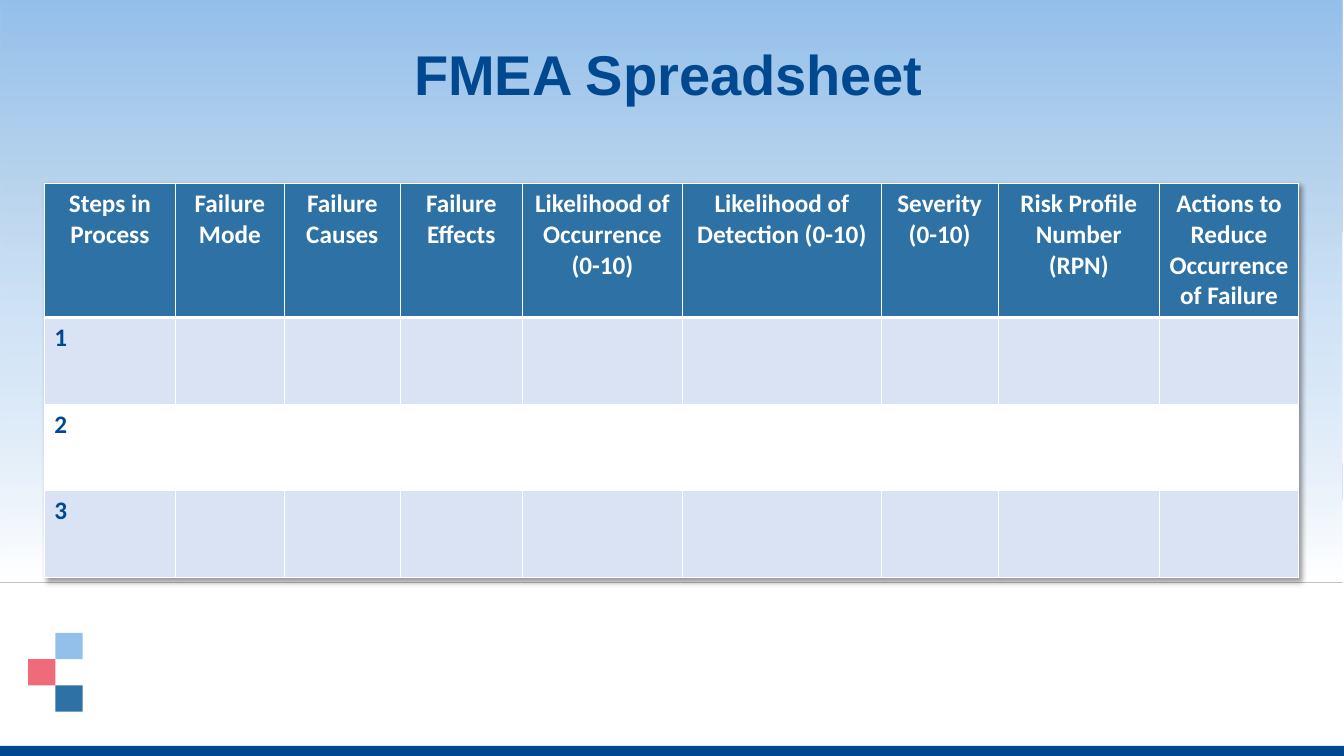
from lxml import etree
from pptx import Presentation
from pptx.dml.color import RGBColor
from pptx.enum import shapes, text
from pptx.oxml import ns
from pptx.util import Inches, Pt

NAVY = RGBColor(0x00, 0x49, 0x91)
BLUE = RGBColor(0x2E, 0x72, 0xA5)
SKY = RGBColor(0x93, 0xBF, 0xEB)
MIST = RGBColor(0xB5, 0xD2, 0xEC)
HAZE = RGBColor(0xBC, 0xD7, 0xF2)
ROSE = RGBColor(0xEF, 0x6B, 0x7A)
PALE = RGBColor(0xDA, 0xE3, 0xF3)
WHITE = RGBColor(0xFF, 0xFF, 0xFF)
BLACK = RGBColor(0x00, 0x00, 0x00)

WIDTH, HEIGHT = 13.33, 7.5
# Stops: position and opacity in percent
STOPS = [(0, SKY, 100), (29, MIST, 100), (54, HAZE, 69), (99, WHITE, 100)]
HEADS = ["Steps in Process", "Failure Mode", "Failure Causes",
         "Failure Effects", "Likelihood of Occurrence (0-10)",
         "Likelihood of Detection (0-10)", "Severity (0-10)",
         "Risk Profile Number (RPN)",
         "Actions to Reduce Occurrence of Failure"]
COLS = [1.3, 1.08, 1.15, 1.21, 1.59, 1.97, 1.16, 1.6, 1.38]
ROWS = [1.33, 0.86, 0.86, 0.86]


def add(parent, tag, **attrs):
    node = etree.SubElement(parent, ns.qn(tag))
    for name, value in attrs.items():
        node.set(name, str(value))
    return node


def add_rect(slide, box, color):
    rect = slide.shapes.add_shape(shapes.MSO_SHAPE.RECTANGLE,
                                  *map(Inches, box))
    rect.shadow.inherit = False
    rect.fill.solid()
    rect.fill.fore_color.rgb = color
    rect.line.fill.background()
    return rect


def add_sky(slide, box):
    rect = add_rect(slide, box, SKY)
    rect.fill.gradient()
    rect.fill.gradient_angle = 270
    stops = rect._element.spPr.find(".//" + ns.qn("a:gsLst"))
    for old in list(stops):
        stops.remove(old)
    for pos, color, alpha in STOPS:
        stop = add(stops, "a:gs", pos=pos * 1000)
        tint = add(stop, "a:srgbClr", val=color)
        if alpha < 100:
            add(tint, "a:alpha", val=alpha * 1000)


def add_mark(slide, box):
    left, top, width, height = box
    wide, high = width / 2, height / 3
    for col, row, color in [(1, 0, SKY), (1, 2, BLUE), (0, 1, ROSE)]:
        add_rect(slide, (left + col * wide, top + row * high, wide, high),
                 color)


def set_title(slide, box):
    title = slide.shapes.title
    title.left, title.top, title.width, title.height = map(Inches, box)
    frame = title.text_frame
    frame.text = "FMEA Spreadsheet"
    frame.word_wrap = True
    frame.auto_size = text.MSO_AUTO_SIZE.NONE
    frame.vertical_anchor = text.MSO_ANCHOR.TOP
    para = frame.paragraphs[0]
    para.alignment = text.PP_ALIGN.CENTER
    para.line_spacing = 0.9
    para.space_before = Pt(10)
    style(para.runs[0].font, "Arial", 40, NAVY)
    # Bring the title in front of the backdrop
    slide.shapes._spTree.append(title._element)


def style(font, name, size, color):
    font.name, font.size, font.bold = name, Pt(size), True
    font.color.rgb = color


def set_cell(cell, words, head, fill, above):
    # Borders: a heavy rule divides the header from the body
    props = cell._tc.get_or_add_tcPr()
    for side in "LRTB":
        heavy = (head and side == "B") or (above and side == "T")
        line = add(props, "a:ln" + side, w=Pt(3 if heavy else 1))
        add(add(line, "a:solidFill"), "a:srgbClr", val=WHITE)
    cell.fill.solid()
    cell.fill.fore_color.rgb = fill
    para = cell.text_frame.paragraphs[0]
    para.text = words
    para.font.size = Pt(18)
    if head:
        para.alignment = text.PP_ALIGN.CENTER
    for run in para.runs:
        style(run.font, "Calibri", 18, WHITE if head else NAVY)


def add_grid(slide, box):
    table = slide.shapes.add_table(len(ROWS), len(COLS),
                                   *map(Inches, box)).table
    for col, width in zip(table.columns, COLS):
        col.width = Inches(width)
    for row, height in zip(table.rows, ROWS):
        row.height = Inches(height)
    body = [[str(n)] + [""] * (len(COLS) - 1) for n in range(1, len(ROWS))]
    fills = [BLUE, PALE, WHITE, PALE]
    for r, (line, fill) in enumerate(zip([HEADS] + body, fills)):
        for c, words in enumerate(line):
            set_cell(table.cell(r, c), words, r == 0, fill, r == 1)
    # Soft shadow around the table
    effects = etree.Element(ns.qn("a:effectLst"))
    shade = add(effects, "a:outerShdw", blurRad=Pt(4), dist=Pt(3),
                dir=2700000, algn="tl", rotWithShape=0)
    add(add(shade, "a:srgbClr", val=BLACK), "a:alpha", val=40000)
    table._tbl.tblPr.insert(0, effects)


def main():
    deck = Presentation()
    deck.slide_width, deck.slide_height = Inches(WIDTH), Inches(HEIGHT)
    slide = deck.slides.add_slide(deck.slide_layouts[5])
    # Backdrop
    add_sky(slide, (0, 0, WIDTH, 5.79))
    add_rect(slide, (0, 7.4, WIDTH, 0.1), NAVY)
    add_mark(slide, (0.28, 6.28, 0.54, 0.78))
    # Content
    set_title(slide, (0.55, 0.42, 12.15, 0.83))
    add_grid(slide, (0.44, 1.82, sum(COLS), sum(ROWS)))
    deck.save("out.pptx")


if __name__ == "__main__":
    main()
